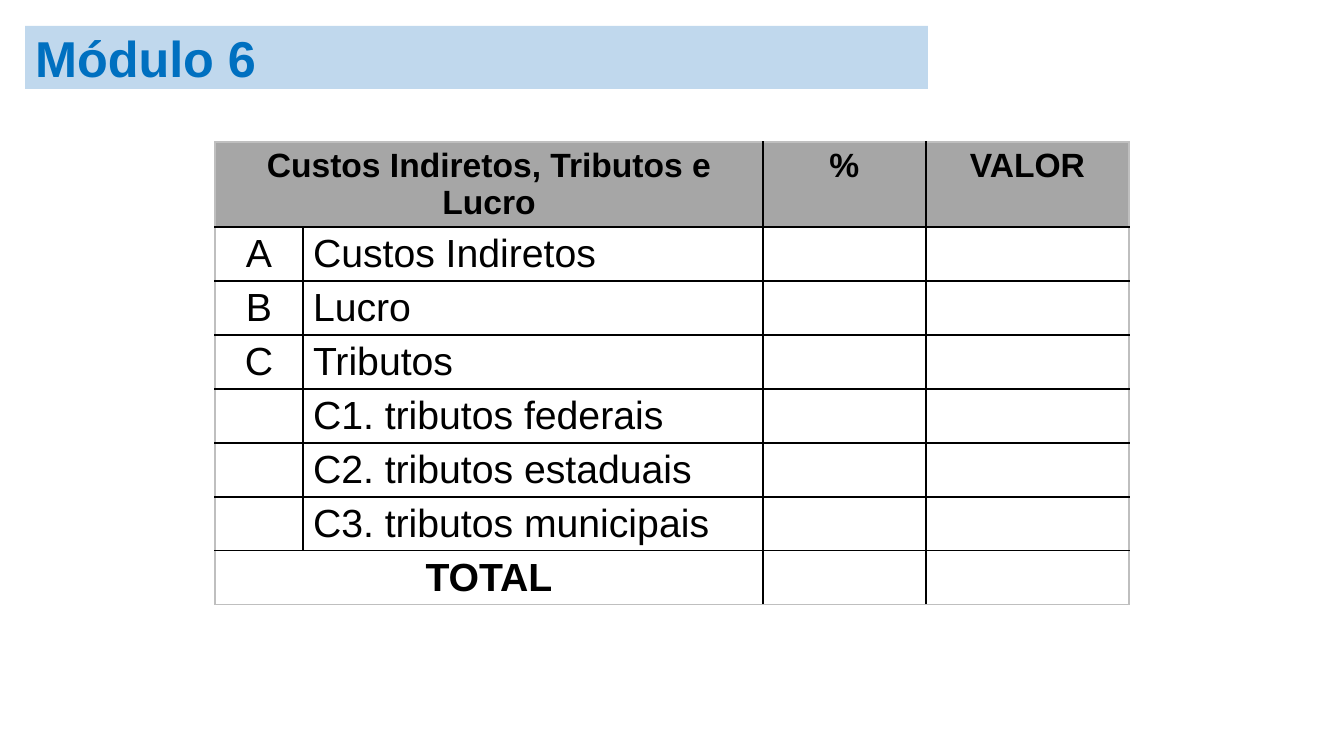
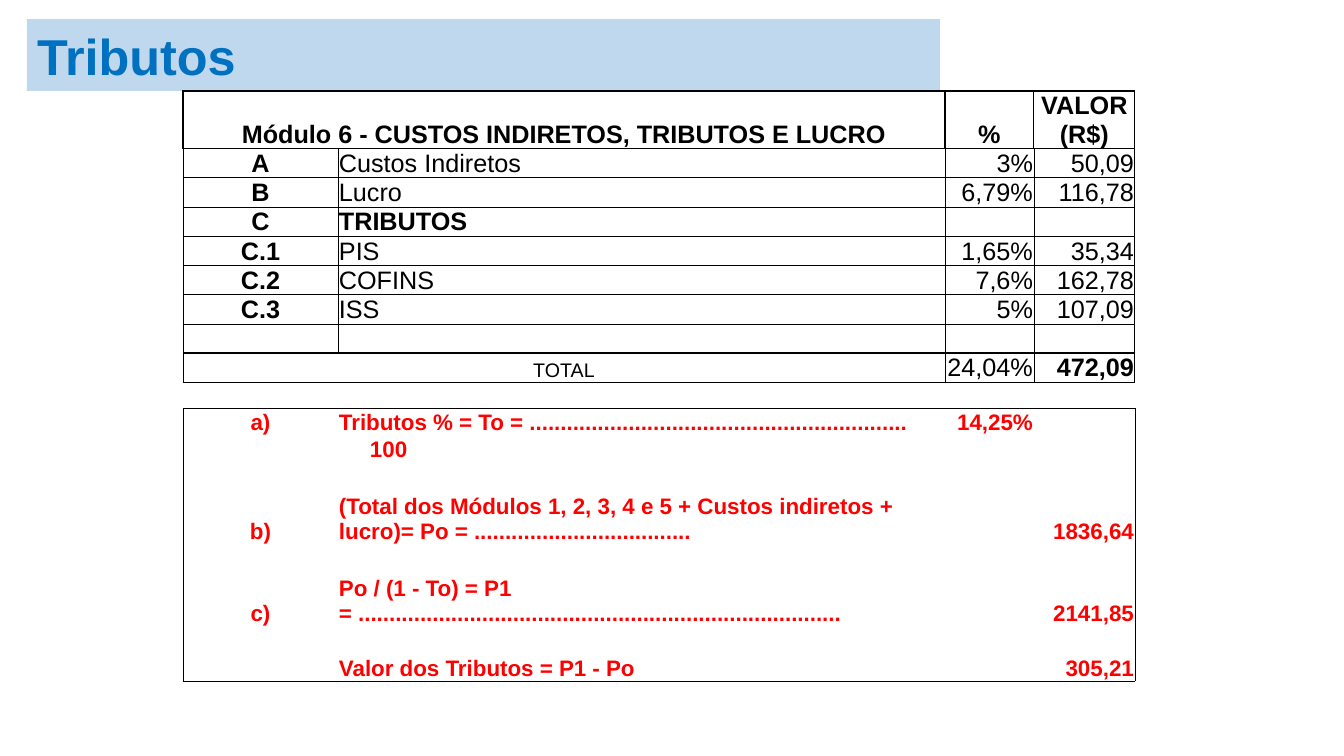
from lxml.etree import SubElement
from pptx import Presentation
from pptx.dml.color import RGBColor
from pptx.enum.text import MSO_ANCHOR as ANCHOR, MSO_AUTO_SIZE as AUTO_SIZE, PP_ALIGN as ALIGN
from pptx.oxml.ns import qn
from pptx.util import Pt

PX = 9071  # EMU in one px, 100.8 px to the inch
FONT = "Arial"
EMPTY_SIZE = 12  # keeps empty cells from stretching their rows
BAND, TITLE_BLUE = "C0D8ED", "0070C0"
BLACK, RED, HEADER_GRAY, EDGE_GRAY = "000000", "FF0000", "A6A6A6", "BFBFBF"
NO_STYLE = "{2D5ABB26-0587-4C30-8999-92F81FD0307C}"
TITLE_ONLY = 5
rgb = RGBColor.from_string

prs = Presentation()
prs.slide_width, prs.slide_height = 1344 * PX, 756 * PX


def add_table_slide(title, band, corner, columns, heights):
    """Add a slide with a banded title and an unstyled table; return the table."""
    slide = prs.slides.add_slide(prs.slide_layouts[TITLE_ONLY])
    heading = slide.shapes.title
    heading.left, heading.top, heading.width, heading.height = [n * PX for n in band]
    heading.fill.solid()
    heading.fill.fore_color.rgb = rgb(BAND)
    frame = heading.text_frame
    frame.text = title
    frame.auto_size = AUTO_SIZE.NONE
    frame.vertical_anchor = ANCHOR.MIDDLE
    frame.paragraphs[0].alignment = ALIGN.LEFT
    font = frame.paragraphs[0].runs[0].font
    for name, value in {"name": FONT, "size": Pt(36), "bold": True}.items():
        setattr(font, name, value)
    font.color.rgb = rgb(TITLE_BLUE)

    left, top = corner
    holder = slide.shapes.add_table(len(heights), len(columns), left * PX, top * PX,
                                    sum(columns) * PX, sum(heights) * PX)
    table = holder.table
    table.first_row = table.horz_banding = False
    next(holder._element.iter(qn("a:tableStyleId"))).text = NO_STYLE
    for column, width in zip(table.columns, columns):
        column.width = width * PX
    for row, height in zip(table.rows, heights):
        row.height = height * PX
    return table


def format_cell(cell, text, size, bold, align, borders, color=BLACK, fill=None):
    """Write and format one cell; borders maps a side (L, R, T, B) to (colour, points)."""
    paragraph = cell.text_frame.paragraphs[0]
    paragraph.alignment = align
    if text:
        run = paragraph.add_run()
        run.text = text
        for name, value in {"name": FONT, "size": Pt(size), "bold": bold}.items():
            setattr(run.font, name, value)
        run.font.color.rgb = rgb(color)
    else:
        SubElement(paragraph._p, qn("a:endParaRPr"), sz=str(EMPTY_SIZE * 100))
    properties = cell._tc.get_or_add_tcPr()
    for side in "LRTB":
        line_color, points = borders.get(side, (None, 0))
        line = SubElement(properties, qn(f"a:ln{side}"), w=str(Pt(points)))
        if line_color:
            solid = SubElement(line, qn("a:solidFill"))
            SubElement(solid, qn("a:srgbClr"), val=line_color)
        else:
            SubElement(line, qn("a:noFill"))
    if fill:
        cell.fill.solid()
        cell.fill.fore_color.rgb = rgb(fill)
    else:
        cell.fill.background()


# Módulo 6
module_rows = [
    ("Custos Indiretos, Tributos e Lucro", "", "%", "VALOR"),
    ("A", "Custos Indiretos", "", ""),
    ("B", "Lucro", "", ""),
    ("C", "Tributos", "", ""),
    ("", "C1. tributos federais", "", ""),
    ("", "C2. tributos estaduais", "", ""),
    ("", "C3. tributos municipais", "", ""),
    ("TOTAL", "", "", ""),
]
module = add_table_slide("Módulo 6", (25, 26, 903, 63), (215, 142),
                         [88, 460, 163, 203], [85] + [54] * 7)
last = len(module_rows) - 1
for r, texts in enumerate(module_rows):
    for c, text in enumerate(texts):
        outer = {"L": c == 0, "R": c == 3, "T": r == 0, "B": r == last}
        format_cell(
            module.cell(r, c), text,
            size=24 if r == 0 else 28,
            bold=r in (0, last),
            align=ALIGN.LEFT if c == 1 else ALIGN.CENTER,
            borders={side: (EDGE_GRAY if edge else BLACK, 1) for side, edge in outer.items()},
            fill=HEADER_GRAY if r == 0 else None,
        )
for r in (0, last):
    module.cell(r, 0).merge(module.cell(r, 1))

# Tributos
cost_rows = [
    ("Módulo 6 - CUSTOS INDIRETOS, TRIBUTOS E LUCRO", "", "%", "VALOR (R$)"),
    ("A", "Custos Indiretos", "3%", "50,09"),
    ("B", "Lucro", "6,79%", "116,78"),
    ("C", "TRIBUTOS", "", ""),
    ("C.1", "PIS", "1,65%", "35,34"),
    ("C.2", "COFINS", "7,6%", "162,78"),
    ("C.3", "ISS", "5%", "107,09"),
    ("", "", "", ""),
    ("TOTAL", "", "24,04%", "472,09"),
]
spacer = ("", "", "", "")
formula_rows = [
    ("a)", "Tributos % = To = " + "." * 61, "14,25%", ""),
    ("", "100", "", ""),
    spacer,
    ("b)", "(Total dos Módulos 1, 2, 3, 4 e 5 + Custos indiretos + lucro)= Po = " + "." * 35,
     "", "1836,64"),
    spacer,
    ("c)", "Po / (1 - To) = P1 = " + "." * 78, "", "2141,85"),
    spacer,
    ("", "Valor dos Tributos = P1 - Po", "", "305,21"),
]
tax_rows = cost_rows + [spacer] + formula_rows
total = len(cost_rows) - 1
gap = total + 1
first_formula = gap + 1
last = len(tax_rows) - 1
LABEL, LABEL_END, PERCENT, VALUE = 1, 6, 7, 8
taxes = add_table_slide("Tributos", (27, 19, 913, 72), (183, 91),
                        [155] + [77] * 5 + [222, 89, 101],
                        [57] + [29] * total + [26, 27, 27, 27, 55, 27, 55, 27, 28])
aligns = {0: ALIGN.CENTER, PERCENT: ALIGN.RIGHT, VALUE: ALIGN.RIGHT}
for r, (item, label, percent, amount) in enumerate(tax_rows):
    texts = {0: item, LABEL: label, PERCENT: percent, VALUE: amount}
    for c in range(VALUE + 1):
        text = texts.get(c, "")
        cell = taxes.cell(r, c)
        cell.vertical_anchor = ANCHOR.BOTTOM
        cell.margin_left = cell.margin_right = cell.margin_top = PX
        cell.margin_bottom = 0
        if r <= total:
            heavy = {"L": r == 0, "R": r == 0 or c == VALUE,
                     "T": r in (0, 1, total), "B": r in (0, total)}
            borders = {side: (BLACK, 1 if thick else 0.5) for side, thick in heavy.items()}
            bold = r == 0 or (c == 0 and r < total) or text in ("TRIBUTOS", "472,09")
            size, color = 14 if text == "TOTAL" else 18, BLACK
        elif r == gap:
            borders = {"T": (BLACK, 1), "B": (BLACK, 0.5)}
        else:
            framed = {"L": c == 0, "R": c == VALUE, "T": r == first_formula, "B": r == last}
            borders = {side: (BLACK, 0.5) for side, edge in framed.items() if edge}
            bold, size, color = True, 16, RED
        align = ALIGN.CENTER if r == 0 else aligns.get(c, ALIGN.LEFT)
        format_cell(cell, text, size, bold, align, borders, color)
    if r in (0, total):
        taxes.cell(r, 0).merge(taxes.cell(r, LABEL_END))
    elif r == gap:
        taxes.cell(r, LABEL).merge(taxes.cell(r, VALUE))
    elif label or r < total:
        taxes.cell(r, LABEL).merge(taxes.cell(r, LABEL_END))
taxes.cell(first_formula + 1, LABEL).margin_left = 32 * PX

prs.save("out.pptx")
